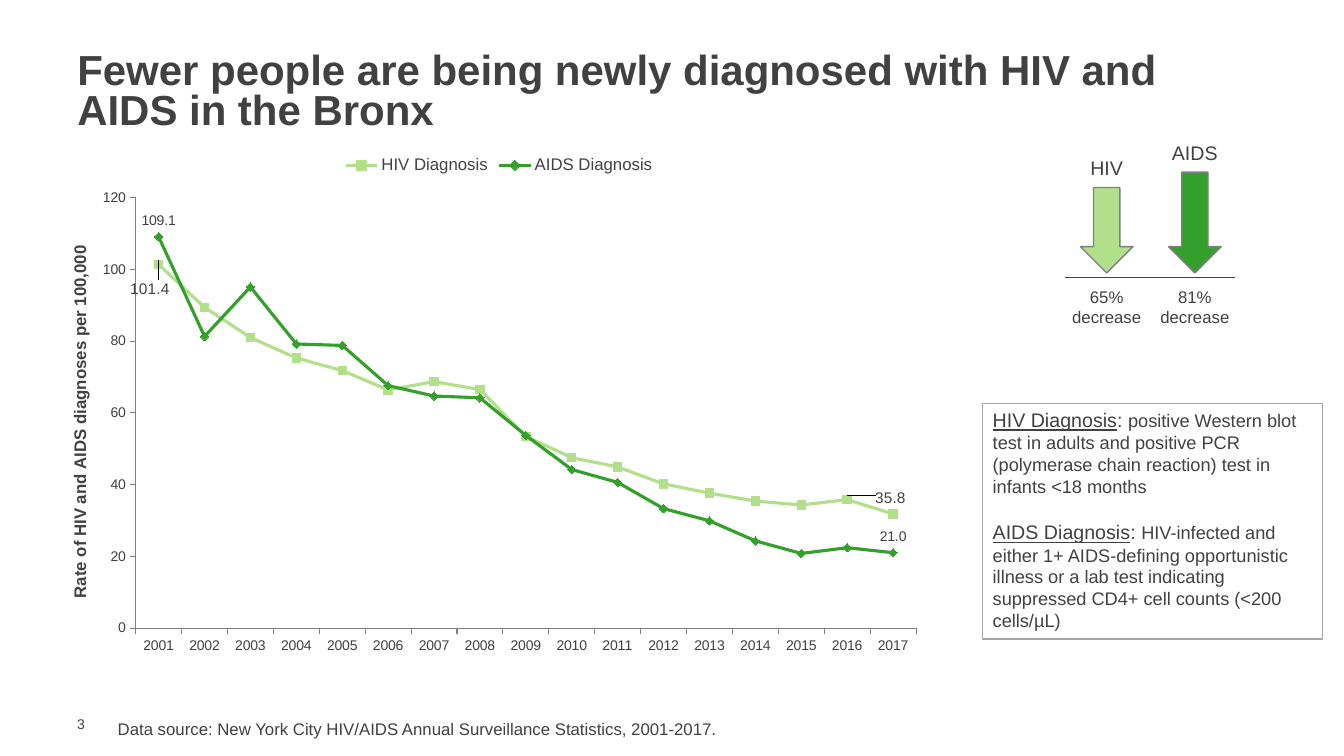
import pptx
import pptx.util
import pptx.chart.data
import pptx.dml.color
import pptx.enum.chart
import pptx.enum.shapes
import pptx.enum.text
import pptx.oxml
import pptx.oxml.ns
from lxml import etree

Pt = pptx.util.Pt
Align = pptx.enum.text.PP_ALIGN
Anchor = pptx.enum.text.MSO_ANCHOR
Shape = pptx.enum.shapes.MSO_SHAPE
Kind = pptx.enum.chart
INK, GREY, EDGE, PALE, DEEP = "414042", "A6A6A6", "808080", "B2DF8A", "33A02C"

# Content
TITLE = "Fewer people are being newly diagnosed with HIV and AIDS in the Bronx"
SOURCE = ("Data source: New York City HIV/AIDS Annual Surveillance Statistics, "
          "2001-2017.")
NUMBER = "3"
AXIS = "Rate of HIV and AIDS diagnoses per 100,000"
YEARS = [str(y) for y in range(2001, 2018)]
# Series: name, colour, marker, values, labels {point: (size, shift x, shift y)}
SERIES = [
    ("HIV Diagnosis", PALE, "SQUARE",
     [101.4, 89.4, 81.0, 75.3, 71.8, 66.4, 68.7, 66.5, 53.4, 47.5, 44.9,
      40.2, 37.6, 35.4, 34.3, 35.8, 31.8],
     {0: (11, -0.01, 0.08), 15: (11, 0.05, 0.03)}),
    ("AIDS Diagnosis", DEEP, "DIAMOND",
     [109.1, 81.3, 95.1, 79.2, 78.8, 67.6, 64.7, 64.2, 53.7, 44.2, 40.6,
      33.3, 29.9, 24.3, 20.8, 22.4, 21.0],
     {0: (10, 0, 0), 16: (10, 0, 0)}),
]
# Drops: name, fall, colour, centre x, arrow top
DROPS = [("HIV", "65% decrease", PALE, 790.5, 134),
         ("AIDS", "81% decrease", DEEP, 853.5, 123)]
TERMS = [
    ("HIV Diagnosis", "positive Western blot test in adults and positive PCR "
     "(polymerase chain reaction) test in infants <18 months"),
    ("AIDS Diagnosis", "HIV-infected and either 1+ AIDS-defining opportunistic "
     "illness or a lab test indicating suppressed CD4+ cell counts "
     "(<200 cells/µL)"),
]
PLOT = {"x": 0.08, "y": 0.102, "w": 0.902, "h": 0.831}


def tint(code):
    return pptx.dml.color.RGBColor.from_string(code)


def style(font, size, **more):
    for key, val in {"name": "Arial", "size": Pt(size), **more}.items():
        setattr(font, key, val)
    font.color.rgb = tint(INK)


def edge(line, code, width):
    line.color.rgb = tint(code)
    line.width = Pt(width)


def node(tag, **kids):
    top = pptx.oxml.parse_xml(f"<c:{tag} {pptx.oxml.ns.nsdecls('c')}/>")
    for key, val in kids.items():
        etree.SubElement(top, pptx.oxml.ns.qn("c:" + key)).set("val", str(val))
    return top


def layout(**kids):
    top = node("layout")
    top.append(node("manualLayout", **kids))
    return top


def label(text, box, size, align=Align.LEFT, **frame):
    tf = slide.shapes.add_textbox(*map(Pt, box)).text_frame
    for key, val in {"word_wrap": True, **frame}.items():
        setattr(tf, key, val)
    para = tf.paragraphs[0]
    para.text, para.alignment = text, align
    style(para.font, size)


deck = pptx.Presentation()
deck.slide_width, deck.slide_height = Pt(960), Pt(540)
slide = deck.slides.add_slide(deck.slide_layouts[5])

# Title
title = slide.shapes.title
title.left, title.top, title.width, title.height = map(Pt, (48, 34, 864, 65.5))
title.text_frame.text = TITLE
title.text_frame.vertical_anchor = Anchor.MIDDLE
head = title.text_frame.paragraphs[0]
head.alignment, head.line_spacing = Align.LEFT, 0.8
style(head.font, 30, bold=True)

# Footer
label(NUMBER, (48, 511, 31, 12.5), 10, vertical_anchor=Anchor.MIDDLE,
      margin_top=0, margin_right=0, margin_bottom=0)
label(SOURCE, (77, 510, 699, 21.5), 12)

# Definitions
box = slide.shapes.add_shape(Shape.RECTANGLE, *map(Pt, (702, 288, 242.5, 168.5)))
box.shadow.inherit = False
box.fill.background()
edge(box.line, GREY, 0.75)
frame = box.text_frame
frame.word_wrap, frame.vertical_anchor = True, Anchor.TOP
for i, (term, body) in enumerate(TERMS):
    para = frame.add_paragraph() if i else frame.paragraphs[0]
    para.alignment = Align.LEFT
    if i:
        para.space_before = Pt(16.5)
    for text, size, under in ((term, 14, True), (": ", 14, False),
                              (body, 13, False)):
        run = para.add_run()
        run.text = text
        style(run.font, size, underline=under)

# Chart
data = pptx.chart.data.CategoryChartData(number_format="0.0")
data.categories = YEARS
for name, _, _, vals, _ in SERIES:
    data.add_series(name, vals)
chart = slide.shapes.add_chart(Kind.XL_CHART_TYPE.LINE_MARKERS,
                               *map(Pt, (47.5, 103.5, 618, 370)), data).chart
style(chart.font, 10)
chart.has_title = False
chart.has_legend = True
chart.legend.position = Kind.XL_LEGEND_POSITION.TOP
chart.legend.include_in_layout = False
style(chart.legend.font, 12)

# Axes
for axis in (chart.category_axis, chart.value_axis):
    axis.has_major_gridlines = False
    axis.major_tick_mark = Kind.XL_TICK_MARK.OUTSIDE
    edge(axis.format.line, EDGE, 0.75)
    style(axis.tick_labels.font, 10)
rate = chart.value_axis
rate.minimum_scale, rate.maximum_scale, rate.major_unit = 0, 120, 20
rate.tick_labels.number_format = "0"
rate.tick_labels.number_format_is_linked = False
rate.axis_title.text_frame.text = AXIS
style(rate.axis_title.text_frame.paragraphs[0].font, 12, bold=True)

# Plot area
area = chart.plots[0]._element.getparent()
for old in area.findall(pptx.oxml.ns.qn("c:layout")):
    area.remove(old)
area.insert(0, layout(layoutTarget="inner", xMode="edge", yMode="edge", **PLOT))
chart.plots[0].vary_by_categories = False

# Lines and their labels
LEAD = ('<c:extLst %s><c:ext uri="{CE6537A1-D6FC-4f65-9D91-7224C49458BB}" '
        'xmlns:c15="http://schemas.microsoft.com/office/drawing/2012/chart">'
        '<c15:showLeaderLines val="1"/></c:ext></c:extLst>'
        % pptx.oxml.ns.nsdecls("c"))
for line, (_, code, mark, _, tags) in zip(chart.plots[0].series, SERIES):
    line.smooth = False
    edge(line.format.line, code, 2.25)
    line.marker.style = getattr(Kind.XL_MARKER_STYLE, mark)
    line.marker.size = 6
    line.marker.format.fill.solid()
    line.marker.format.fill.fore_color.rgb = tint(code)
    edge(line.marker.format.line, code, 0.75)
    line.data_labels.show_value = False
    for i, (size, dx, dy) in tags.items():
        tag = line.points[i].data_label
        style(tag.font, size)
        tag.position = Kind.XL_LABEL_POSITION.ABOVE
        part = line.data_labels._element.xpath(f"c:dLbl[c:idx/@val='{i}']")[0]
        form = node("numFmt")
        form.set("formatCode", "0.0")
        form.set("sourceLinked", "0")
        part.insert(1, form)
        if dx or dy:
            part.insert(1, layout(x=dx, y=dy))
    line.data_labels._element.append(pptx.oxml.parse_xml(LEAD))

# Falling arrows above a base line
BASE = 198
for name, fall, code, mid, top in DROPS:
    label(name, (mid - 40, top - 26, 80, 24.5), 14, Align.CENTER)
    label(fall, (mid - 37, BASE + 3.5, 74, 36), 12, Align.CENTER)
    arrow = slide.shapes.add_shape(
        Shape.DOWN_ARROW, *map(Pt, (mid - 18.75, top, 37.5, BASE - 3 - top)))
    arrow.shadow.inherit = False
    arrow.fill.solid()
    arrow.fill.fore_color.rgb = tint(code)
    edge(arrow.line, EDGE, 1)
rule = slide.shapes.add_connector(pptx.enum.shapes.MSO_CONNECTOR.STRAIGHT,
                                  *map(Pt, (760.5, BASE, 882, BASE)))
edge(rule.line, INK, 0.75)
etree.SubElement(rule._element.spPr, pptx.oxml.ns.qn("a:effectLst"))

deck.save("out.pptx")
